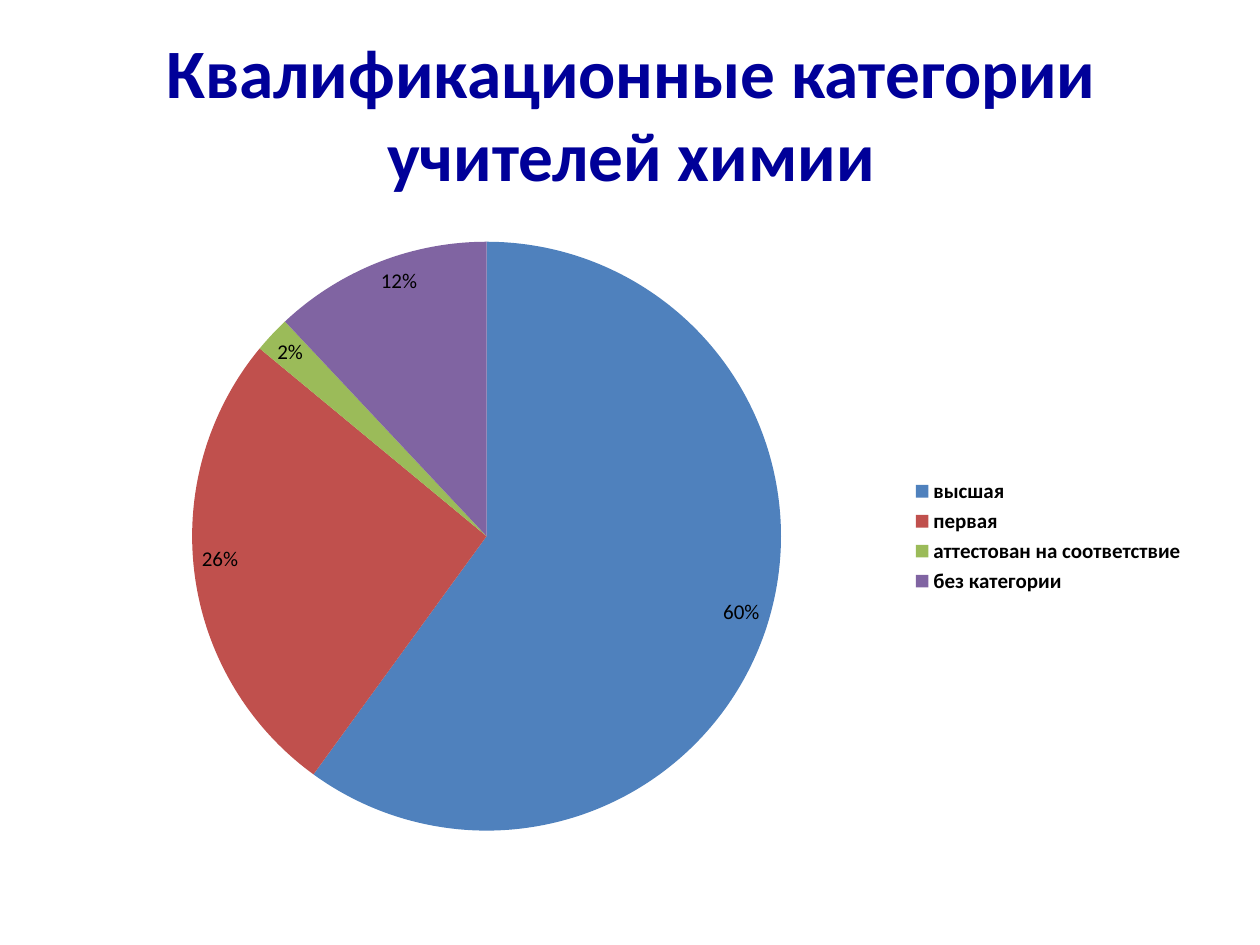
from pptx import Presentation
from pptx import util as u
from pptx.chart.data import CategoryChartData
from pptx.dml.color import RGBColor
from pptx.enum import chart as ch, text

FONT = "Calibri"
SHARES = [
    ("высшая", 0.60, "4F81BD"),
    ("первая", 0.26, "C0504D"),
    ("аттестован на соответствие", 0.02, "9BBB59"),
    ("без категории", 0.12, "8064A2"),
]


def color(hex_code):
    return RGBColor.from_string(hex_code)


def style_font(font, size, hex_code, bold=False):
    font.name = FONT
    font.size = u.Pt(size)
    font.bold = bold
    font.color.rgb = color(hex_code)


def add_title(page, left, top, width, height):
    box = page.shapes.add_textbox(u.Pt(left), u.Pt(top), u.Pt(width), u.Pt(height))
    frame = box.text_frame
    frame.word_wrap = True
    frame.vertical_anchor = text.MSO_ANCHOR.MIDDLE
    frame.margin_bottom = u.Pt(51.6)  # lifts the heading by half a line
    frame.text = "Квалификационные категории учителей химии"
    para = frame.paragraphs[0]
    para.alignment = text.PP_ALIGN.CENTER
    style_font(para.runs[0].font, 39.6, "000099", bold=True)


def add_category_pie(page, left, top, width, height):
    data = CategoryChartData(number_format="0%")
    data.categories = [name for name, _, _ in SHARES]
    data.add_series("Series 1", [share for _, share, _ in SHARES])
    pie = page.shapes.add_chart(
        ch.XL_CHART_TYPE.PIE,
        u.Pt(left), u.Pt(top), u.Pt(width), u.Pt(height), data,
    ).chart
    pie.has_title = False
    style_font(pie.font, 12, "000000")

    pie.has_legend = True
    pie.legend.position = ch.XL_LEGEND_POSITION.RIGHT
    pie.legend.include_in_layout = False
    style_font(pie.legend.font, 12, "000000", bold=True)

    plot = pie.plots[0]
    plot.vary_by_categories = True
    for index, (_, _, hex_code) in enumerate(SHARES):
        fill = plot.series[0].points[index].format.fill
        fill.solid()
        fill.fore_color.rgb = color(hex_code)

    plot.has_data_labels = True
    labels = plot.data_labels
    labels.show_value = True
    labels.number_format = "0%"
    labels.number_format_is_linked = False
    labels.position = ch.XL_LABEL_POSITION.INSIDE_END
    style_font(labels.font, 12, "000000")


def main():
    deck = Presentation()
    deck.slide_width, deck.slide_height = u.Pt(720), u.Pt(540)
    page = deck.slides.add_slide(deck.slide_layouts[6])
    left, width = 36.7, 648
    add_title(page, left, 43.2, width, 90)
    add_category_pie(page, left, 128.2, width, 356.4)
    deck.save("out.pptx")


if __name__ == "__main__":
    main()
